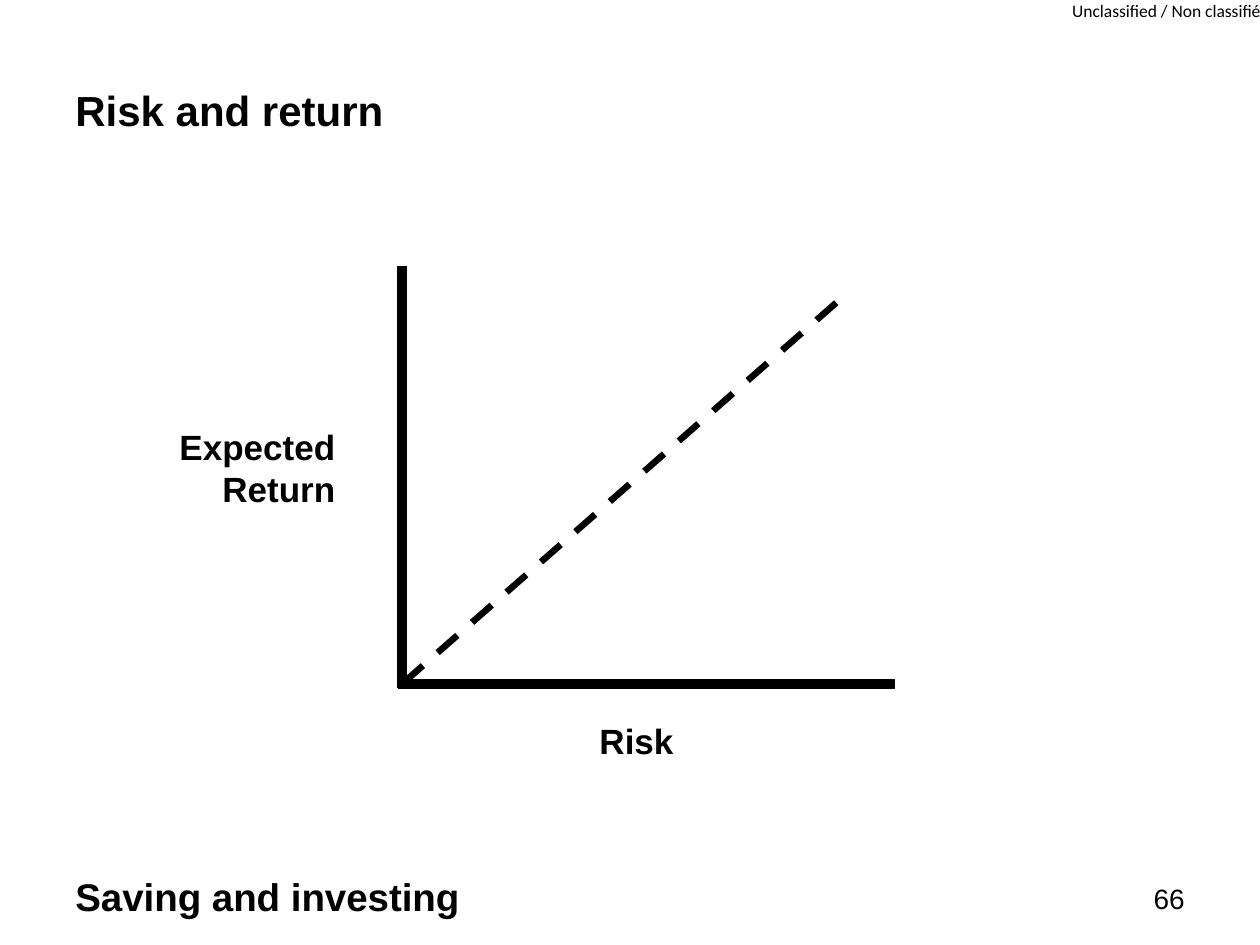
from lxml import etree
from pptx import Presentation
from pptx.dml.color import RGBColor
from pptx.enum.dml import MSO_LINE
from pptx.enum.shapes import MSO_CONNECTOR
from pptx.enum.text import PP_ALIGN
from pptx.oxml.ns import qn
from pptx.util import Inches, Pt

LEFT, RIGHT = PP_ALIGN.LEFT, PP_ALIGN.RIGHT
STRAIGHT = MSO_CONNECTOR.STRAIGHT
DASH = MSO_LINE.DASH
BLACK = "000000"


def color(hex_code):
    return RGBColor.from_string(hex_code)


def add_text(text, box, size, bold=True, align=LEFT, font="Arial"):
    """Add a one-run text box and return its text frame."""
    frame = slide.shapes.add_textbox(*map(Inches, box)).text_frame
    frame.word_wrap = True
    paragraph = frame.paragraphs[0]
    paragraph.alignment = align
    run = paragraph.add_run()
    run.text = text
    run.font.name = font
    run.font.size = Pt(size)
    run.font.bold = bold
    run.font.color.rgb = color(BLACK)
    return frame


prs = Presentation()
prs.slide_width, prs.slide_height = Inches(10), Inches(7.5)
slide = prs.slides.add_slide(prs.slide_layouts[6])

# Page furniture
classification = add_text("Unclassified / Non classifié", (8.51, 0, 1.52, 0.17),
                          10, bold=False, font="Calibri")
classification.word_wrap = False
classification.margin_left = classification.margin_right = 0
classification.margin_top = classification.margin_bottom = 0

add_text("Risk and return", (0.5, 0.62, 8.33, 0.5), 24)
add_text("Saving and investing", (0.5, 6.88, 8.33, 0.39), 22)
add_text("66", (8.96, 6.95, 0.54, 0.33), 16, bold=False, align=RIGHT)

# Return axis, risk axis and the dashed trade-off between them
diagram_lines = [
    ((3.19, 2.11), (3.19, 5.46), 5.5, None),
    ((7.1, 5.43), (3.16, 5.43), 5.5, None),
    ((3.2, 5.42), (6.64, 2.4), 3.75, DASH),
]
for start, end, weight, dash in diagram_lines:
    connector = slide.shapes.add_connector(STRAIGHT, *map(Inches, start + end))
    connector.line.color.rgb = color(BLACK)
    connector.line.width = Pt(weight)
    if dash:
        connector.line.dash_style = dash
    etree.SubElement(connector._element.spPr, qn("a:effectLst"))

# Axis labels
add_text("Expected Return", (0.48, 3.33, 2.28, 0.77), 20, align=RIGHT)
add_text("Risk", (4.66, 5.66, 2.4, 0.44), 20)

prs.save("out.pptx")
